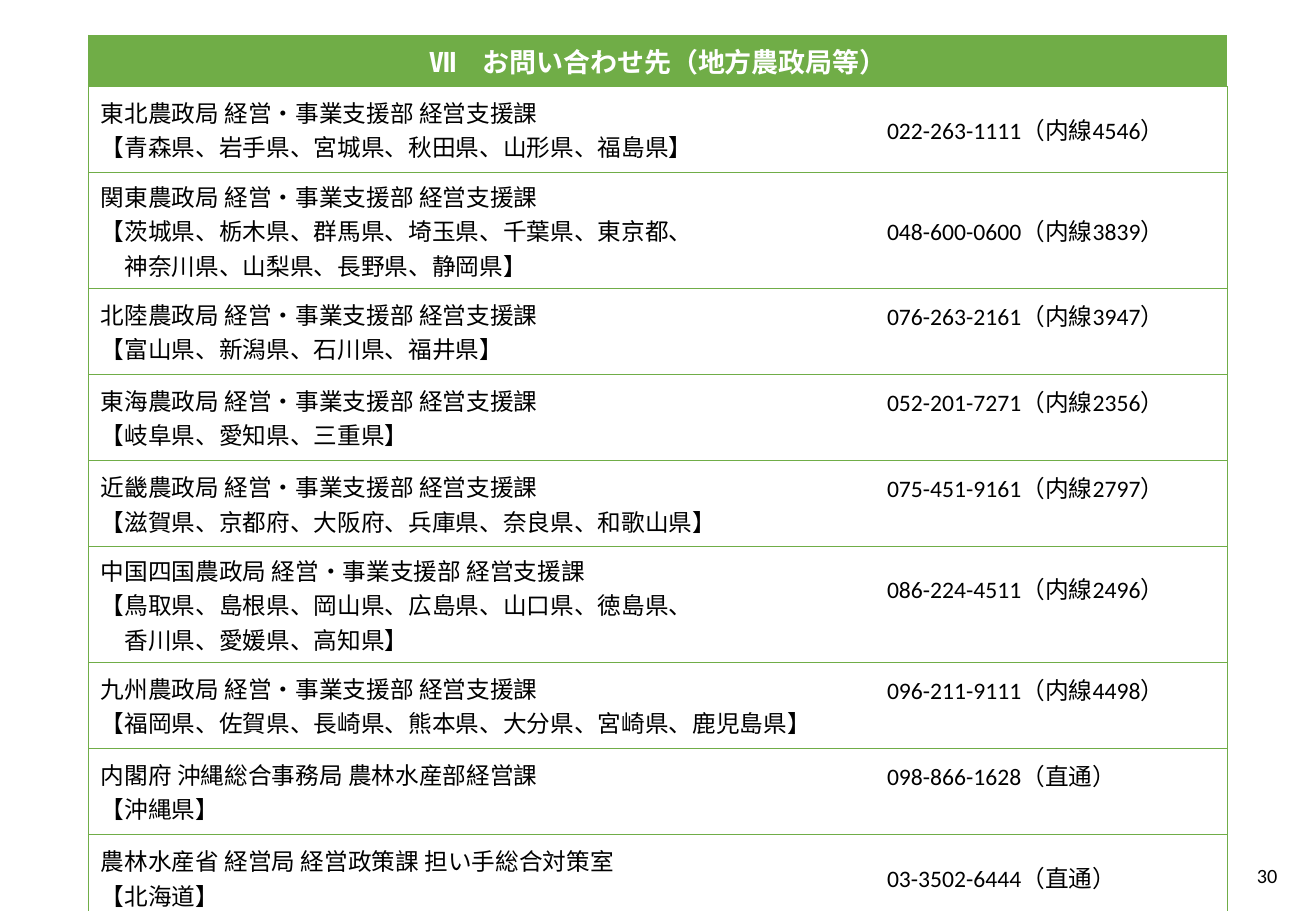
from dataclasses import dataclass

from lxml.etree import SubElement
from pptx import Presentation
from pptx.dml.color import RGBColor
from pptx.enum.text import MSO_ANCHOR, PP_ALIGN
from pptx.oxml.ns import qn
from pptx.util import Pt


@dataclass(frozen=True)
class Theme:
    font: str = "Calibri"
    green: str = "70AD47"
    white: str = "FFFFFF"
    black: str = "000000"
    title_size: float = 16
    body_size: float = 14
    number_size: float = 12
    border_width: float = 0.5


# Row heights by number of text lines, and the lift of the raised phone numbers
ROW_HEIGHTS = {1: 30.2, 2: 51.1, 3: 68.5}
COLUMN_WIDTHS = (465.84, 208.8)
CELL_MARGIN = 3.6
RAISED_MARGIN = CELL_MARGIN + 19
TITLE = "Ⅶ　お問い合わせ先（地方農政局等）"
SUPPORT = "経営・事業支援部 経営支援課"

# Office, prefecture lines, phone, phone raised above the middle
CONTACTS = [
    (f"東北農政局 {SUPPORT}",
     ["【青森県、岩手県、宮城県、秋田県、山形県、福島県】"],
     "022-263-1111（内線4546）", False),
    (f"関東農政局 {SUPPORT}",
     ["【茨城県、栃木県、群馬県、埼玉県、千葉県、東京都、",
      "神奈川県、山梨県、長野県、静岡県】"],
     "048-600-0600（内線3839）", False),
    (f"北陸農政局 {SUPPORT}",
     ["【富山県、新潟県、石川県、福井県】"],
     "076-263-2161（内線3947）", True),
    (f"東海農政局 {SUPPORT}",
     ["【岐阜県、愛知県、三重県】"],
     "052-201-7271（内線2356）", True),
    (f"近畿農政局 {SUPPORT}",
     ["【滋賀県、京都府、大阪府、兵庫県、奈良県、和歌山県】"],
     "075-451-9161（内線2797）", True),
    (f"中国四国農政局 {SUPPORT}",
     ["【鳥取県、島根県、岡山県、広島県、山口県、徳島県、",
      "香川県、愛媛県、高知県】"],
     "086-224-4511（内線2496）", True),
    (f"九州農政局 {SUPPORT}",
     ["【福岡県、佐賀県、長崎県、熊本県、大分県、宮崎県、鹿児島県】"],
     "096-211-9111（内線4498）", True),
    ("内閣府 沖縄総合事務局 農林水産部経営課",
     ["【沖縄県】"], "098-866-1628（直通）", True),
    ("農林水産省 経営局 経営政策課 担い手総合対策室",
     ["【北海道】"], "03-3502-6444（直通）", False),
]


class PageBuilder:
    def __init__(self, page, theme):
        self.page = page
        self.theme = theme

    def add_lines(self, frame, lines, size, color, bold=False, align=PP_ALIGN.LEFT):
        """Add one paragraph per line; a third line is indented by one character."""
        for index, line in enumerate(lines):
            para = frame.add_paragraph() if index else frame.paragraphs[0]
            para.alignment = align
            if index == 2:
                para._p.get_or_add_pPr().set("marL", str(Pt(size)))
            span = para.add_run()
            span.text = line
            span.font.color.rgb = RGBColor.from_string(color)
            values = {"name": self.theme.font, "size": Pt(size), "bold": bold}
            for name, value in values.items():
                setattr(span.font, name, value)

    def add_text(self, left, top, width, height, line, size, align):
        box = self.page.shapes.add_textbox(Pt(left), Pt(top), Pt(width), Pt(height))
        frame = box.text_frame
        values = {"word_wrap": True, "vertical_anchor": MSO_ANCHOR.MIDDLE}
        for name, value in values.items():
            setattr(frame, name, value)
        self.add_lines(frame, [line], size, self.theme.black, align=align)

    def add_grid(self, left, top, widths, heights):
        frame = self.page.shapes.add_table(
            len(heights), len(widths), Pt(left), Pt(top),
            Pt(sum(widths)), Pt(sum(heights)))
        table = frame.table
        for name in ("first_row", "horz_banding"):
            setattr(table, name, False)
        for column, width in zip(table.columns, widths):
            column.width = Pt(width)
        for row, height in zip(table.rows, heights):
            row.height = Pt(height)
        return table

    def style_cell(self, cell, fill, hidden_side, bottom=CELL_MARGIN):
        properties = cell._tc.get_or_add_tcPr()
        for side in ("lnL", "lnR", "lnT", "lnB"):
            line = SubElement(properties, qn(f"a:{side}"),
                              w=str(Pt(self.theme.border_width)))
            if side == hidden_side:
                SubElement(line, qn("a:noFill"))
            else:
                paint = SubElement(line, qn("a:solidFill"))
                SubElement(paint, qn("a:srgbClr"), val=self.theme.green)
        cell.fill.solid()
        cell.fill.fore_color.rgb = RGBColor.from_string(fill)
        values = {"vertical_anchor": MSO_ANCHOR.MIDDLE,
                  "margin_top": Pt(CELL_MARGIN), "margin_bottom": Pt(bottom)}
        for name, value in values.items():
            setattr(cell, name, value)


def main():
    theme = Theme()
    deck = Presentation()
    deck.slide_width, deck.slide_height = Pt(779.76), Pt(540)
    builder = PageBuilder(deck.slides.add_slide(deck.slide_layouts[6]), theme)

    # Contact table
    heights = [ROW_HEIGHTS[1]]
    heights += [ROW_HEIGHTS[1 + len(areas)] for _, areas, _, _ in CONTACTS]
    table = builder.add_grid(52.56, 20.88, COLUMN_WIDTHS, heights)

    # Title row across both columns
    title = table.cell(0, 0)
    title.merge(table.cell(0, 1))
    for column, hidden_side in enumerate(("lnR", "lnL")):
        builder.style_cell(table.cell(0, column), theme.green, hidden_side)
    builder.add_lines(title.text_frame, [TITLE], theme.title_size, theme.white,
                      bold=True, align=PP_ALIGN.CENTER)

    # One row per office
    for row, (office, areas, phone, raised) in enumerate(CONTACTS, start=1):
        bottom = RAISED_MARGIN if raised else CELL_MARGIN
        cells = (([office, *areas], "lnR", CELL_MARGIN), ([phone], "lnL", bottom))
        for column, (lines, hidden_side, margin) in enumerate(cells):
            cell = table.cell(row, column)
            builder.style_cell(cell, theme.white, hidden_side, margin)
            builder.add_lines(cell.text_frame, lines, theme.body_size, theme.black)

    # Page number
    builder.add_text(588.24, 504.72, 175.68, 28.8, "30", theme.number_size,
                     PP_ALIGN.RIGHT)

    deck.save("out.pptx")


if __name__ == "__main__":
    main()
